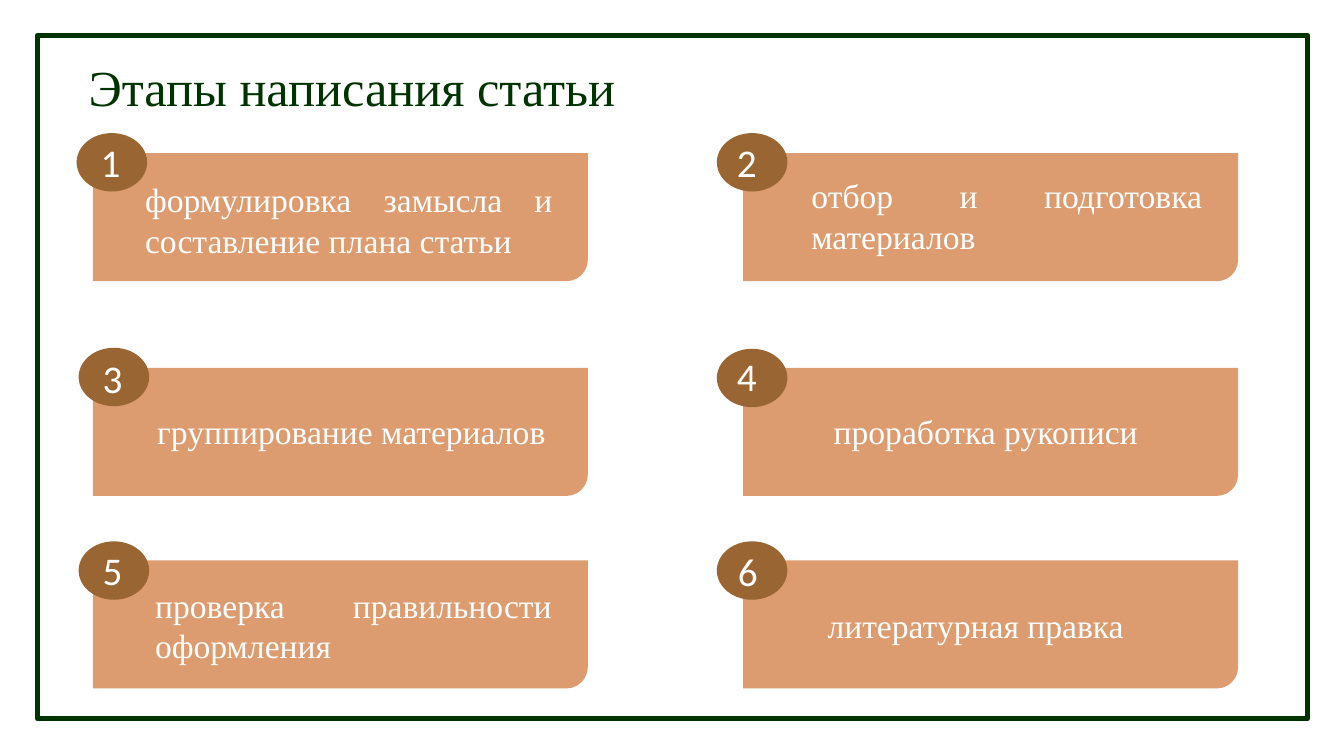
from lxml import etree
from pptx import Presentation
from pptx.dml.color import RGBColor
from pptx.enum.shapes import MSO_SHAPE
from pptx.enum.text import MSO_ANCHOR, MSO_AUTO_SIZE, PP_ALIGN
from pptx.oxml.ns import qn
from pptx.util import Inches, Pt

RECT, OVAL = MSO_SHAPE.RECTANGLE, MSO_SHAPE.OVAL
CARD = MSO_SHAPE.ROUND_2_DIAG_RECTANGLE
MIDDLE, TOP = MSO_ANCHOR.MIDDLE, MSO_ANCHOR.TOP
LEFT, JUSTIFY = PP_ALIGN.LEFT, PP_ALIGN.JUSTIFY
GROW = MSO_AUTO_SIZE.SHAPE_TO_FIT_TEXT

GREEN, ORANGE, BROWN, WHITE = "003300", "C55A11", "996633", "FFFFFF"
CARD_X, CARD_Y = (0.92, 7.37), (1.52, 3.65, 5.56)
CARD_W, CARD_H = 4.91, 1.27
BADGE_W, BADGE_H = 0.7, 0.58

# Row by row: label, label box, badge corner, number box (left, top, width)
STAGES = [
    ("формулировка замысла и составление плана статьи",
     (1.34, 1.73, 4.24, 0.89), (0.76, 1.32), (0.9, 1.32, 0.58)),
    ("отбор и подготовка материалов",
     (7.95, 1.69, 4.07, 0.89), (7.11, 1.32), (7.21, 1.32, 0.5)),
    ("группирование материалов",
     (1.46, 4.03, 4.11, 0.49), (0.78, 3.45), (0.92, 3.47, 0.58)),
    ("проработка рукописи",
     (8.17, 4.03, 3.84, 0.49), (7.11, 3.46), (7.21, 3.45, 0.66)),
    ("проверка правильности оформления",
     (1.44, 5.75, 4.13, 0.89), (0.78, 5.37), (0.92, 5.37, 0.7)),
    ("литературная правка",
     (8.11, 5.95, 4.03, 0.49), (7.11, 5.37), (7.22, 5.38, 0.73)),
]


def rgb(value):
    return RGBColor.from_string(value)


class Slide:
    """Draws styled elements on one blank slide."""

    formats = {
        "title": {"name": "Times New Roman", "size": Pt(36)},
        "label": {"name": "Times New Roman", "size": Pt(24)},
        "number": {"name": "Calibri", "size": Pt(28)},
    }

    def __init__(self, prs):
        self.s = prs.slides.add_slide(prs.slide_layouts[6])

    def shape(self, kind, box, fill, line=None, line_width=0, opacity=100):
        sp = self.s.shapes.add_shape(kind, *map(Inches, box))
        sp.shadow.inherit = False
        sp.fill.solid()
        sp.fill.fore_color.rgb = rgb(fill)
        if opacity < 100:
            color = sp._element.spPr.find(qn("a:solidFill"))[0]
            etree.SubElement(color, qn("a:alpha"), val=str(opacity * 1000))
        if line:
            sp.line.color.rgb = rgb(line)
            sp.line.width = Pt(line_width)
        else:
            sp.line.fill.background()
        return sp

    def text(self, text, box, style, color=WHITE, align=LEFT, anchor=TOP,
             spacing=1.0, auto_size=GROW):
        tf = self.s.shapes.add_textbox(*map(Inches, box)).text_frame
        tf.word_wrap = True
        tf.auto_size = auto_size
        tf.vertical_anchor = anchor
        p = tf.paragraphs[0]
        p.alignment = align
        p.line_spacing = spacing
        r = p.add_run()
        r.text = text
        for name, value in self.formats[style].items():
            setattr(r.font, name, value)
        r.font.color.rgb = rgb(color)


def main():
    prs = Presentation()
    prs.slide_width, prs.slide_height = Inches(13.33), Inches(7.5)
    slide = Slide(prs)
    slide.shape(RECT, (0.37, 0.35, 12.6, 6.78), WHITE, GREEN, 3.5)
    slide.text("Этапы написания статьи", (0.78, 0.57, 11.5, 0.66), "title",
               GREEN, anchor=MIDDLE, spacing=0.9, auto_size=MSO_AUTO_SIZE.NONE)

    for i, (label, label_box, badge, number_box) in enumerate(STAGES):
        row, col = divmod(i, 2)
        slide.shape(CARD, (CARD_X[col], CARD_Y[row], CARD_W, CARD_H),
                    ORANGE, opacity=60)
        slide.text(label, label_box, "label", align=JUSTIFY)
        slide.shape(OVAL, (*badge, BADGE_W, BADGE_H), BROWN)
        slide.text(str(i + 1), (*number_box, 0.57), "number")

    prs.save("out.pptx")


if __name__ == "__main__":
    main()
